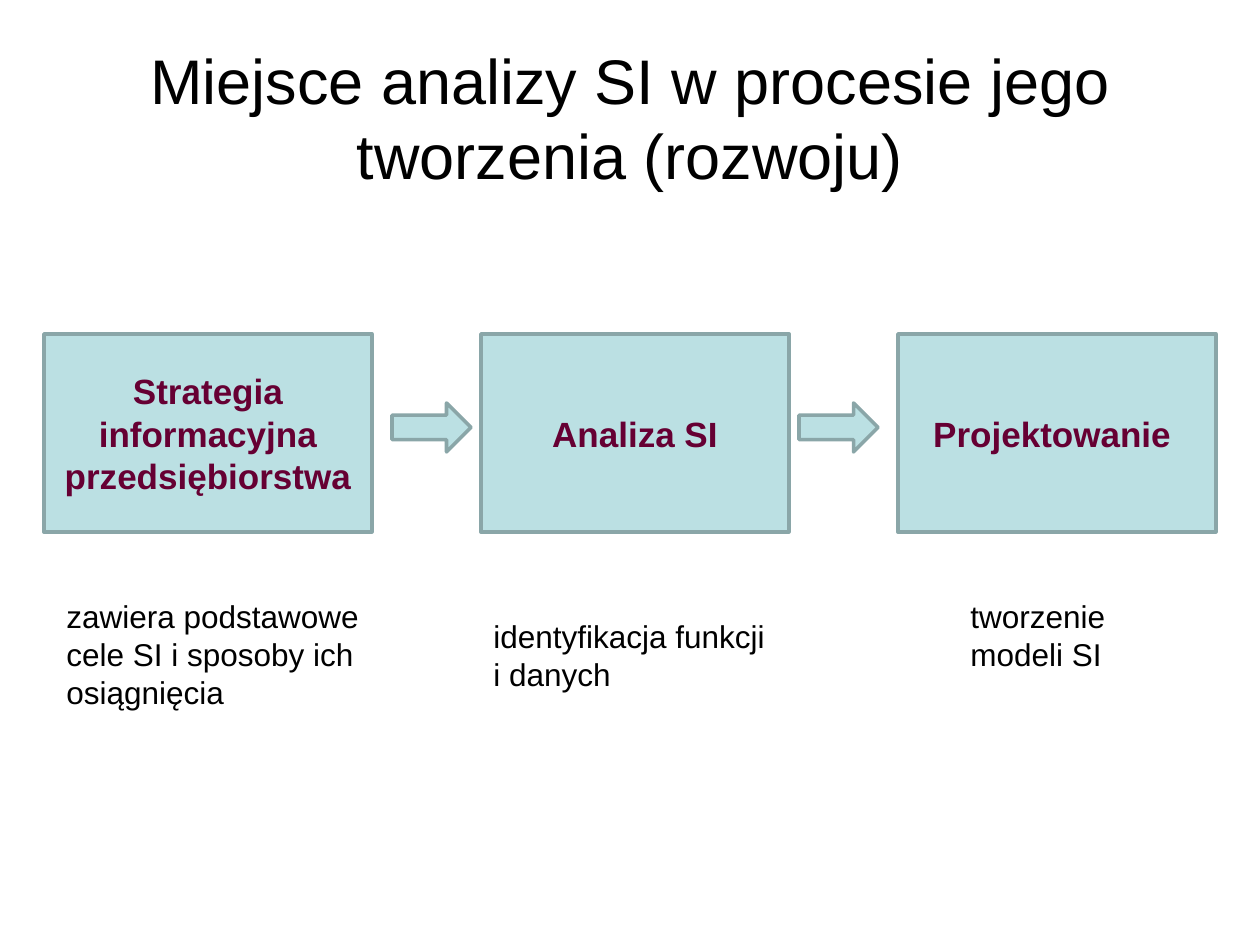
"""Builds the slide on the place of IS analysis in system development."""
from pptx import Presentation
from pptx.dml.color import RGBColor
from pptx.enum.shapes import MSO_SHAPE
from pptx.enum.text import MSO_ANCHOR, MSO_AUTO_SIZE, PP_ALIGN
from pptx.util import Pt

SCALE = 914400 / 126
THEME = {
    "fill": RGBColor.from_string("BBE0E3"),
    "line": RGBColor.from_string("8AA6A8"),
    "title": {"name": "Arial", "size": Pt(36), "bold": False, "color": "000000"},
    "step": {"name": "Arial", "size": Pt(20), "bold": True, "color": "660033"},
    "note": {"name": "Arial", "size": Pt(18), "bold": False, "color": "000000"},
}


def write(shape, text, style, align, frame):
    body = shape.text_frame
    for key, val in frame.items():
        setattr(body, key, val)
    para = body.paragraphs[0]
    para.alignment = align
    run = para.add_run()
    run.text = text
    for key, val in THEME[style].items():
        if key == "color":
            run.font.color.rgb = RGBColor.from_string(val)
        else:
            setattr(run.font, key, val)


def draw(kind, *place):
    shape = slide.shapes.add_shape(kind, *(round(n * SCALE) for n in place))
    shape.shadow.inherit = False
    shape.fill.solid()
    shape.fill.fore_color.rgb = THEME["fill"]
    shape.line.color.rgb = THEME["line"]
    shape.line.width = Pt(2)
    return shape


deck = Presentation()
deck.slide_width, deck.slide_height = round(1260 * SCALE), round(945 * SCALE)
slide = deck.slides.add_slide(deck.slide_layouts[5])
middle = {"word_wrap": True, "vertical_anchor": MSO_ANCHOR.MIDDLE}
grow = {"word_wrap": True, "auto_size": MSO_AUTO_SIZE.SHAPE_TO_FIT_TEXT}

title = slide.shapes.title
for key, val in {"left": 63, "top": 38, "width": 1134, "height": 158}.items():
    setattr(title, key, round(val * SCALE))
write(title, "Miejsce analizy SI w procesie jego tworzenia (rozwoju)", "title",
      PP_ALIGN.CENTER, {**middle, "auto_size": MSO_AUTO_SIZE.NONE})

steps = [
    (44, 328, "Strategia informacyjna przedsiębiorstwa"),
    (481, 308, "Analiza SI"),
    (898, 318, "Projektowanie "),
]
for left, width, text in steps:
    box = draw(MSO_SHAPE.RECTANGLE, left, 334, width, 198)
    write(box, text, "step", PP_ALIGN.CENTER, middle)

notes = [
    (54, 591, 338, 127, "zawiera podstawowe cele SI i sposoby ich osiągnięcia"),
    (481, 611, 298, 89, "identyfikacja funkcji i danych"),
    (958, 591, 248, 89, "tworzenie modeli SI"),
]
for *place, text in notes:
    note = slide.shapes.add_textbox(*(round(n * SCALE) for n in place))
    write(note, text, "note", PP_ALIGN.LEFT, grow)

for left in (392, 799):
    draw(MSO_SHAPE.RIGHT_ARROW, left, 403, 79, 49)

deck.save("out.pptx")
